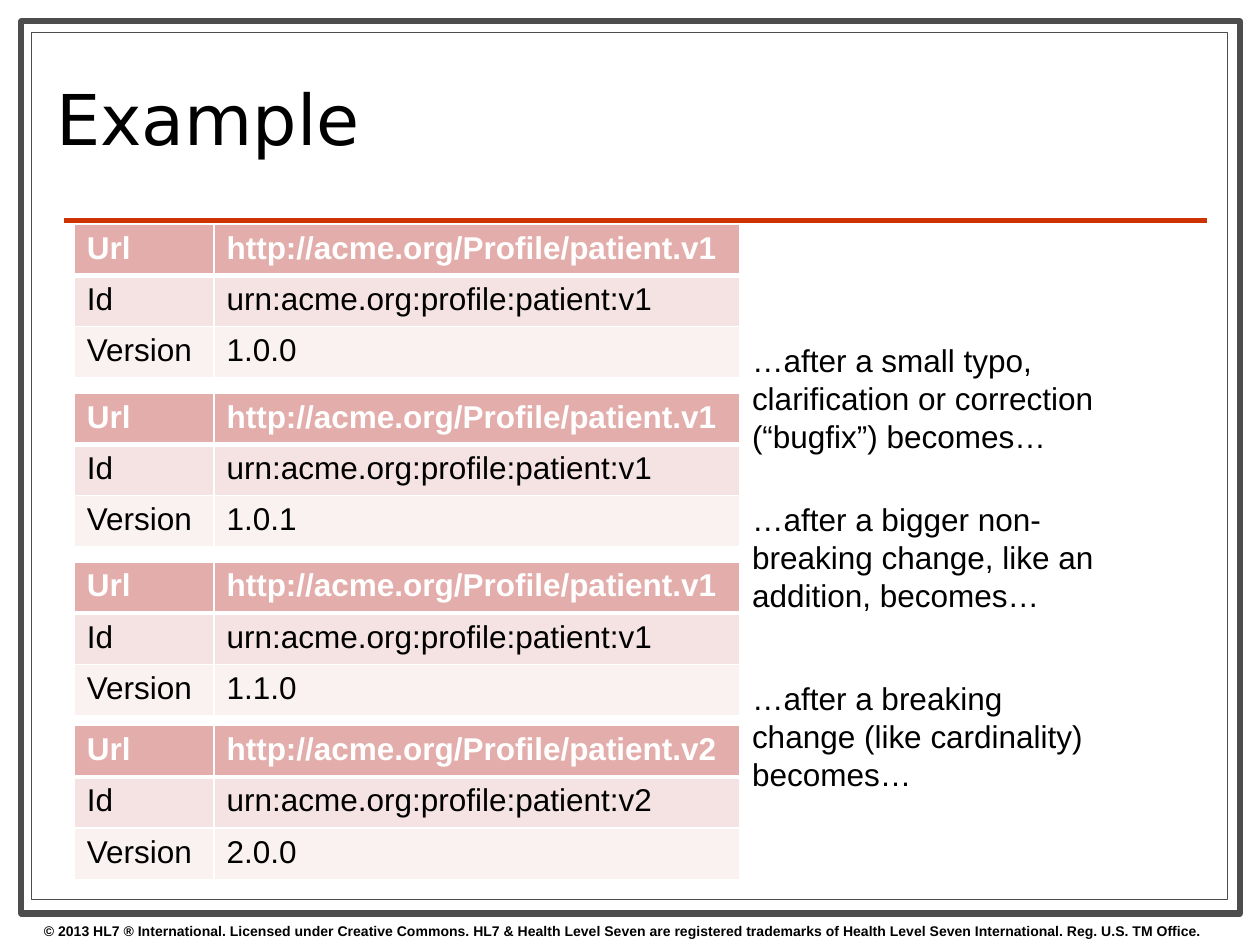
from collections import namedtuple

from lxml import etree
from pptx import Presentation
from pptx.dml.color import RGBColor
from pptx.enum import shapes, text
from pptx.oxml import ns
from pptx.util import Emu, Inches, Pt

COLORS = {
    "paper": "FFFFFF", "ink": "000000", "border": "4D4D4D", "rule": "CC3300",
    "header": "E2ADAA", "band_dark": "F4E3E2", "band_light": "FAF1F1",
}
BODY_FONT, TITLE_FONT = "Arial", "DejaVu Sans"

# The slide is a grid of 100 columns by 75 rows
COLUMNS, ROWS = 100, 75
WIDTH, HEIGHT = Inches(10), Inches(7.5)
Box = namedtuple("Box", "left top width height")

COPYRIGHT = ("© 2013 HL7 ® International. Licensed under Creative Commons. "
             "HL7 & Health Level Seven are registered trademarks of "
             "Health Level Seven International. Reg. U.S. TM Office.")
# Top row, major version, full version
RELEASES = [(17.8, "v1", "1.0.0"), (31.2, "v1", "1.0.1"),
            (44.6, "v1", "1.1.0"), (57.6, "v2", "2.0.0")]
# Top row, reason for the next version
CHANGES = [
    (26.6, "…after a small typo, clarification or correction (“bugfix”) becomes…"),
    (39.2, "…after a bigger non-breaking change, like an addition, becomes…"),
    (53.4, "…after a breaking change (like cardinality) becomes…"),
]


def grid(left, top, width, height):
    across, down = WIDTH / COLUMNS, HEIGHT / ROWS
    return Box(Emu(round(left * across)), Emu(round(top * down)),
               Emu(round(width * across)), Emu(round(height * down)))


def color(name):
    return RGBColor.from_string(COLORS[name])


def write(frame, words, size=18, font=BODY_FONT, ink="ink", bold=False,
          spacing=None, anchor=text.MSO_ANCHOR.TOP):
    frame.word_wrap = True
    frame.vertical_anchor = anchor
    paragraph = frame.paragraphs[0]
    paragraph.line_spacing = spacing
    run = paragraph.add_run()
    run.text = words
    run.font.size, run.font.name, run.font.bold = Pt(size), font, bold
    run.font.color.rgb = color(ink)


def add_text(slide, box, words, **style):
    write(slide.shapes.add_textbox(*box).text_frame, words, **style)


def add_frame(slide, box, line_width):
    border = slide.shapes.add_shape(shapes.MSO_SHAPE.RECTANGLE, *box)
    border.shadow.inherit = False
    border.fill.solid()
    border.fill.fore_color.rgb = color("paper")
    border.line.color.rgb = color("border")
    border.line.width = Pt(line_width)


def add_heading(slide, box, title):
    # Title above, red rule along the bottom of the box
    add_text(slide, box._replace(width=round(box.width * 0.78),
                                 height=round(box.height * 0.91)),
             title, size=40, font=TITLE_FONT, spacing=0.8,
             anchor=text.MSO_ANCHOR.MIDDLE)
    bottom = box.top + box.height
    rule = slide.shapes.add_connector(
        shapes.MSO_CONNECTOR.STRAIGHT, box.left + Inches(0.16), bottom,
        box.left + box.width, bottom)
    rule.line.color.rgb = color("rule")
    rule.line.width = Pt(3)
    etree.SubElement(rule._element.spPr, ns.qn("a:effectLst"))


def set_borders(cell, top=1, bottom=1):
    properties = cell._tc.get_or_add_tcPr()
    for side, points in zip("LRTB", (1, 1, top, bottom)):
        line = etree.SubElement(properties, ns.qn(f"a:ln{side}"), w=str(Pt(points)))
        fill = etree.SubElement(line, ns.qn("a:solidFill"))
        etree.SubElement(fill, ns.qn("a:srgbClr"), val=COLORS["paper"])


def add_release_table(slide, box, major, version):
    rows = [("Url", f"http://acme.org/Profile/patient.{major}"),
            ("Id", f"urn:acme.org:profile:patient:{major}"),
            ("Version", version)]
    table = slide.shapes.add_table(len(rows), 2, *box).table
    label_width = round(box.width * 0.21)
    table.columns[0].width = label_width
    table.columns[1].width = box.width - label_width
    for r, (entries, fill) in enumerate(
            zip(rows, ("header", "band_dark", "band_light"))):
        for c, words in enumerate(entries):
            cell = table.cell(r, c)
            # A thick line parts the header from the body
            set_borders(cell, top=3 if r == 1 else 1, bottom=3 if r == 0 else 1)
            cell.fill.solid()
            cell.fill.fore_color.rgb = color(fill)
            write(cell.text_frame, words, bold=r == 0,
                  ink="paper" if r == 0 else "ink")


def main():
    deck = Presentation()
    deck.slide_width, deck.slide_height = WIDTH, HEIGHT
    slide = deck.slides.add_slide(deck.slide_layouts[6])

    # Double frame and copyright line
    add_frame(slide, grid(1.7, 1.7, 96.7, 70.8), 3.5)
    add_frame(slide, grid(2.5, 2.6, 94.9, 68.8), 0.75)
    add_text(slide, grid(2.5, 72.7, 100, 2.3), COPYRIGHT, size=8, bold=True)

    add_heading(slide, grid(3.5, 3.6, 92.3, 13.9), "Example")

    # Releases on the left, the changes between them on the right
    for top, major, version in RELEASES:
        add_release_table(slide, grid(5.9, top, 52.8, 12.2), major, version)
    for top, change in CHANGES:
        add_text(slide, grid(58.7, top, 29.9, 10.1), change)

    deck.save("out.pptx")


if __name__ == "__main__":
    main()
